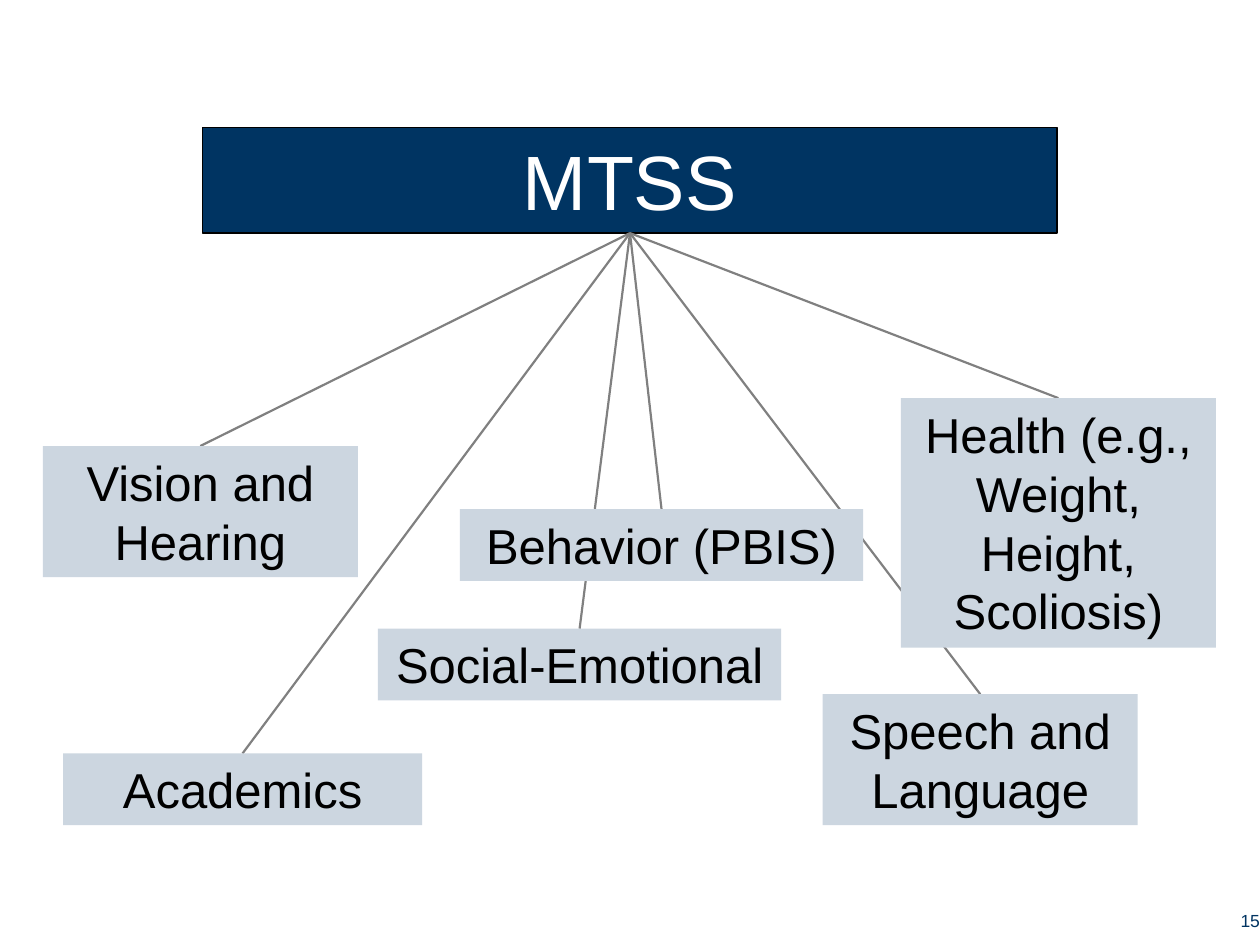
"""Build the MTSS slide: one heading linked to six support areas."""
from lxml import etree
from pptx import Presentation
from pptx.dml.color import RGBColor
from pptx.enum.shapes import MSO_CONNECTOR, MSO_SHAPE
from pptx.enum.text import MSO_ANCHOR, MSO_AUTO_SIZE, PP_ALIGN
from pptx.oxml.ns import qn
from pptx.util import Inches, Pt

RECTANGLE = MSO_SHAPE.RECTANGLE
STRAIGHT = MSO_CONNECTOR.STRAIGHT
TOP, MIDDLE = MSO_ANCHOR.TOP, MSO_ANCHOR.MIDDLE
CENTER, RIGHT = PP_ALIGN.CENTER, PP_ALIGN.RIGHT
FIXED = MSO_AUTO_SIZE.NONE

SLIDE_WIDTH, SLIDE_HEIGHT = 10, 7.5
NAVY, PALE, GRAY, BLACK, WHITE = "003462", "CCD6E0", "808080", "000000", "FFFFFF"
FONT = "Arial"
HEADING = "MTSS"
HEADING_TOP, HEADING_WIDTH, HEADING_HEIGHT = 1.01, 6.78, 0.84
PAGE_NUMBER = "15"
NUMBER_SIZE = 0.17
LINE_HEIGHT, BOX_PADDING = 0.47, 0.1

# Text, left, top, width, number of text lines
AREAS = [
    ("Vision and Hearing", 0.34, 3.54, 2.5, 2),
    ("Academics", 0.5, 5.98, 2.85, 1),
    ("Speech and Language", 6.53, 5.51, 2.5, 2),
    ("Social-Emotional", 3, 4.99, 3.2, 1),
    ("Health (e.g., Weight, Height, Scoliosis)", 7.15, 3.16, 2.5, 4),
    ("Behavior (PBIS)", 3.65, 4.04, 3.2, 1),
]


def color(value):
    return RGBColor.from_string(value)


def place(shape, left, top, width, height):
    shape.left, shape.top = Inches(left), Inches(top)
    shape.width, shape.height = Inches(width), Inches(height)


def write(shape, text, size, text_color, alignment=CENTER, anchor=TOP, wrap=True):
    frame = shape.text_frame
    frame.text = text
    frame.word_wrap = wrap
    frame.auto_size = FIXED
    frame.vertical_anchor = anchor
    paragraph = frame.paragraphs[0]
    paragraph.alignment = alignment
    font = paragraph.runs[0].font
    font.name, font.size = FONT, Pt(size)
    font.color.rgb = color(text_color)


def fill(shape, value):
    shape.fill.solid()
    shape.fill.fore_color.rgb = color(value)


def add_heading(slide):
    heading = slide.shapes.title
    place(heading, (SLIDE_WIDTH - HEADING_WIDTH) / 2, HEADING_TOP,
          HEADING_WIDTH, HEADING_HEIGHT)
    fill(heading, NAVY)
    heading.line.color.rgb = color(BLACK)
    heading.line.width = Pt(0.75)
    write(heading, HEADING, 44, WHITE)


def add_link(slide, left, top, width):
    link = slide.shapes.add_connector(
        STRAIGHT, Inches(SLIDE_WIDTH / 2), Inches(HEADING_TOP + HEADING_HEIGHT),
        Inches(left + width / 2), Inches(top))
    link.line.color.rgb = color(GRAY)
    link.line.width = Pt(1.25)
    etree.SubElement(link._element.spPr, qn("a:effectLst"))


def add_area(slide, text, left, top, width, lines):
    height = lines * LINE_HEIGHT + BOX_PADDING
    area = slide.shapes.add_shape(
        RECTANGLE, Inches(left), Inches(top), Inches(width), Inches(height))
    area.shadow.inherit = False
    fill(area, PALE)
    area.line.fill.background()
    write(area, text, 28, BLACK)


def add_page_number(slide):
    size = Inches(NUMBER_SIZE)
    number = slide.shapes.add_textbox(
        Inches(SLIDE_WIDTH) - size, Inches(7.22), size, size)
    frame = number.text_frame
    frame.margin_left = frame.margin_right = 0
    frame.margin_top = frame.margin_bottom = 0
    write(number, PAGE_NUMBER, 10, NAVY, RIGHT, MIDDLE, wrap=False)


def main():
    presentation = Presentation()
    presentation.slide_width = Inches(SLIDE_WIDTH)
    presentation.slide_height = Inches(SLIDE_HEIGHT)
    title_only = presentation.slide_layouts.get_by_name("Title Only")
    slide = presentation.slides.add_slide(title_only)
    add_heading(slide)
    for _, left, top, width, _ in AREAS:
        add_link(slide, left, top, width)
    for area in AREAS:
        add_area(slide, *area)
    add_page_number(slide)
    presentation.save("out.pptx")


if __name__ == "__main__":
    main()
